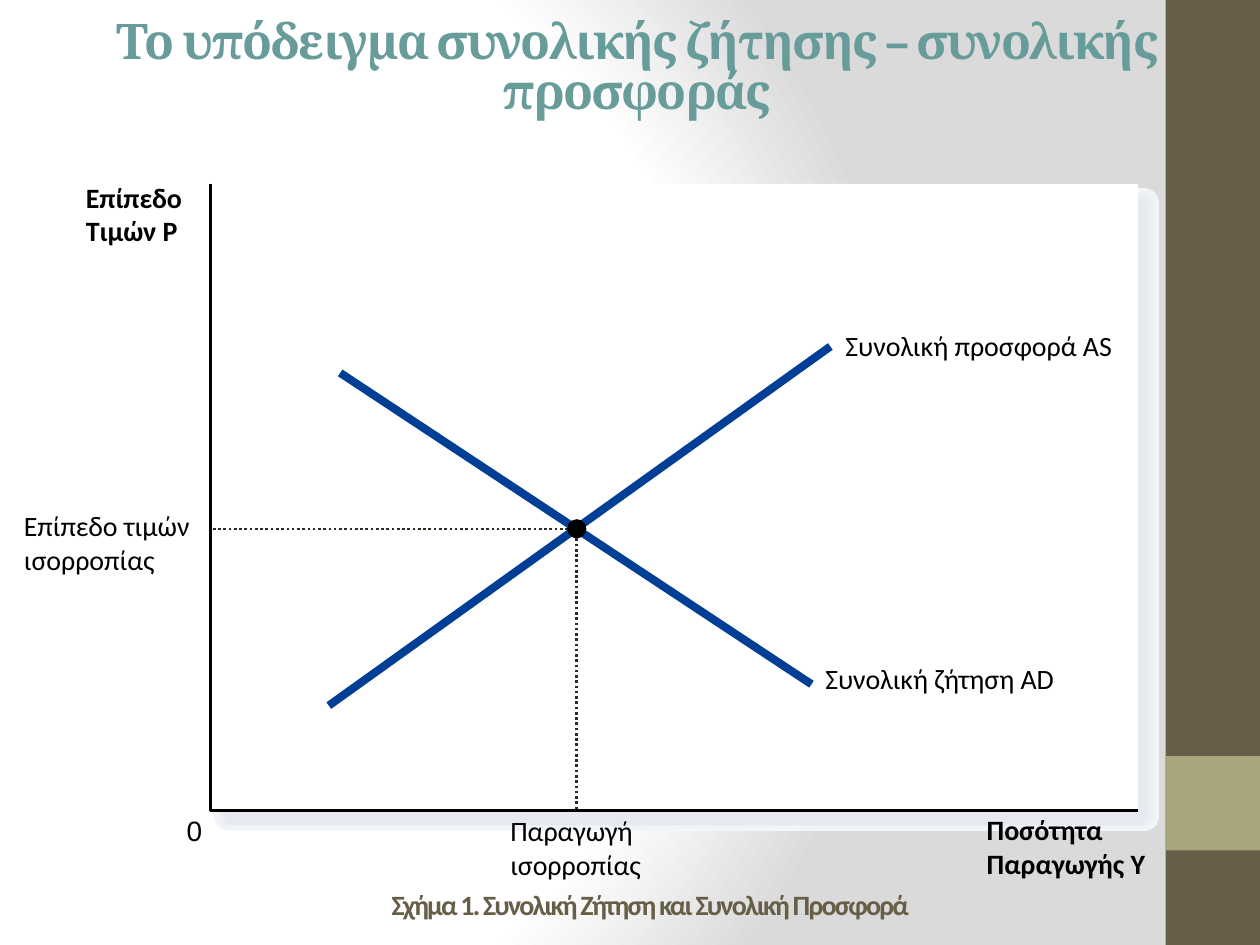
from dataclasses import dataclass

from pptx import Presentation, oxml
from pptx import util as u
from pptx.dml import color
from pptx.enum import dml, shapes, text
from pptx.oxml import ns


@dataclass(frozen=True)
class Theme:
    brown: str = "675E47"
    olive: str = "A9A57C"
    teal: str = "689C9A"
    curve: str = "003F95"
    guide: str = "2F2B20"
    black: str = "000000"
    white: str = "FFFFFF"
    grey: str = "DADADA"
    body_font: str = "Calibri"
    title_font: str = "Cambria"
    digit_font: str = "Arial"
    body_size: float = 16
    title_size: float = 28
    thin: float = 1.5
    thick: float = 4.63


class Diagram:
    """Draws styled elements on one slide, with all lengths in points."""

    def __init__(self, deck, theme):
        self.theme = theme
        self.slide = deck.slides.add_slide(deck.slide_layouts[6])
        self.target = self.slide.shapes

    def group(self):
        self.target = self.slide.shapes.add_group_shape().shapes

    def ungroup(self):
        self.target = self.slide.shapes

    def background(self, stops):
        self.slide.background.fill.gradient()
        gradient = self.slide.element.find(".//" + ns.qn("a:gradFill"))
        for child in list(gradient):
            gradient.remove(child)
        marks = "".join(
            f'<a:gs pos="{place * 1000}"><a:srgbClr val="{shade}"/></a:gs>' for place, shade in stops
        )
        declared = ns.nsdecls("a")
        gradient.append(oxml.parse_xml(f"<a:gsLst {declared}>{marks}</a:gsLst>"))
        gradient.append(oxml.parse_xml(
            f'<a:path {declared} path="circle">'
            '<a:fillToRect l="20000" t="50000" r="100000" b="50000"/></a:path>'
        ))

    def stroke(self, line, shade, width):
        line.color.rgb = color.RGBColor.from_string(shade)
        line.width = u.Pt(width)

    def block(self, box, fill, edge=0, kind=shapes.MSO_SHAPE.RECTANGLE):
        block = self.target.add_shape(kind, *map(u.Pt, box))
        block.shadow.inherit = False
        block.fill.solid()
        block.fill.fore_color.rgb = color.RGBColor.from_string(fill)
        if edge:
            self.stroke(block.line, fill, edge)
        else:
            block.line.fill.background()

    def elbow(self, points, shade, dash=None):
        start, *rest = [tuple(map(u.Pt, point)) for point in points]
        builder = self.target.build_freeform(*start, scale=1.0)
        builder.add_line_segments(rest, close=False)
        elbow = builder.convert_to_shape()
        elbow.shadow.inherit = False
        elbow.fill.background()
        self.stroke(elbow.line, shade, self.theme.thin)
        if dash:
            elbow.line.dash_style = dash

    def curve(self, start, end):
        curve = self.target.add_connector(shapes.MSO_CONNECTOR.STRAIGHT, *map(u.Pt, (*start, *end)))
        self.stroke(curve.line, self.theme.curve, self.theme.thick)
        curve.element.spPr.append(oxml.parse_xml(f"<a:effectLst {ns.nsdecls('a')}/>"))

    def add_words(self, paragraph, words, size, font, shade, bold):
        run = paragraph.add_run()
        run.text = words
        run.font.size = u.Pt(size)
        run.font.name = font
        run.font.bold = bold
        run.font.color.rgb = color.RGBColor.from_string(shade)

    def label(self, box, *lines, bold=False, font=None):
        frame = self.target.add_textbox(*map(u.Pt, box)).text_frame
        frame.margin_left = frame.margin_right = frame.margin_top = frame.margin_bottom = 0
        frame.word_wrap = False
        frame.auto_size = text.MSO_AUTO_SIZE.SHAPE_TO_FIT_TEXT
        for index, words in enumerate(lines):
            paragraph = frame.add_paragraph() if index else frame.paragraphs[0]
            self.add_words(paragraph, words, self.theme.body_size, font or self.theme.body_font,
                           self.theme.black, bold)

    def heading(self, box, words, size, font, shade, spacing, anchor, align):
        heading = self.target.add_textbox(*map(u.Pt, box))
        frame = heading.text_frame
        frame.word_wrap = True
        frame.vertical_anchor = anchor
        paragraph = frame.paragraphs[0]
        paragraph.alignment = align
        paragraph.line_spacing = spacing
        self.add_words(paragraph, words, size, font, shade, True)
        heading.element.find(".//" + ns.qn("a:rPr")).set("spc", "-100")


def main():
    theme = Theme()
    deck = Presentation()
    deck.slide_width, deck.slide_height = u.Pt(720), u.Pt(540)
    diagram = Diagram(deck, theme)

    diagram.background([(0, theme.white), (75, theme.white), (100, theme.grey)])
    diagram.block((666, 0, 54, 540), theme.brown)
    diagram.block((666, 432, 54, 54), theme.olive)
    diagram.heading((216.72, 509.76, 391.68, 17.28),
                    "Σχήμα 1. Συνολική Ζήτηση και Συνολική Προσφορά",
                    theme.body_size, theme.body_font, theme.brown, 0.8,
                    text.MSO_ANCHOR.MIDDLE, text.PP_ALIGN.LEFT)

    halo = ("F3F6F9", "F2F4F8", "F1F4F7", "F0F2F5", "EEF1F4", "EDEFF3",
            "EBEEF2", "EAECF1", "E9EBF0", "E7EAEF", "E6E9EF")
    for step, shade in enumerate(halo):
        height = 355 if shade == halo[-1] else 350.6
        diagram.block((131, 116, 522.7, height), shade, edge=17 - 1.55 * step)

    left, top, right, bottom = 120.2, 105.1, 650.2, 463
    diagram.block((left, top, right - left, bottom - top), theme.white)
    diagram.elbow([(left, top), (left, bottom), (right, bottom)], theme.black)
    diagram.label((563.8, 464.4, 92.2, 38.9), "Ποσότητα", "Παραγωγής Y", bold=True)
    diagram.label((49, 103, 56.9, 38.9), "Επίπεδο", "Τιμών P", bold=True)
    diagram.label((106.6, 465.1, 16.6, 23), "0", font=theme.digit_font)

    diagram.group()
    diagram.curve((187.9, 403.2), (474.5, 198))
    diagram.label((483.1, 187.9, 154.8, 19.4), "Συνολική προσφορά AS")

    diagram.group()
    diagram.curve((463.7, 391), (194.4, 213.1))
    diagram.label((471.6, 378, 132.5, 19.4), "Συνολική ζήτηση AD")

    diagram.group()
    output, price, dot = 329.6, 302.2, 11
    diagram.elbow([(121.7, price), (output, price), (output, bottom)], theme.guide,
                  dml.MSO_LINE.ROUND_DOT)
    diagram.block((output - dot / 2, price - dot / 2, dot, dot), theme.black,
                  kind=shapes.MSO_SHAPE.OVAL)
    diagram.label((291.6, 465.1, 75.6, 38.9), "Παραγωγή", "ισορροπίας")
    diagram.label((13.7, 290.9, 95.8, 38.9), "Επίπεδο τιμών", "ισορροπίας")
    diagram.ungroup()

    diagram.heading((13.7, 7.2, 699.8, 64.8),
                    "Το υπόδειγμα συνολικής ζήτησης – συνολικής προσφοράς",
                    theme.title_size, theme.title_font, theme.teal, 0.85,
                    text.MSO_ANCHOR.BOTTOM, text.PP_ALIGN.CENTER)
    deck.save("out.pptx")


if __name__ == "__main__":
    main()
